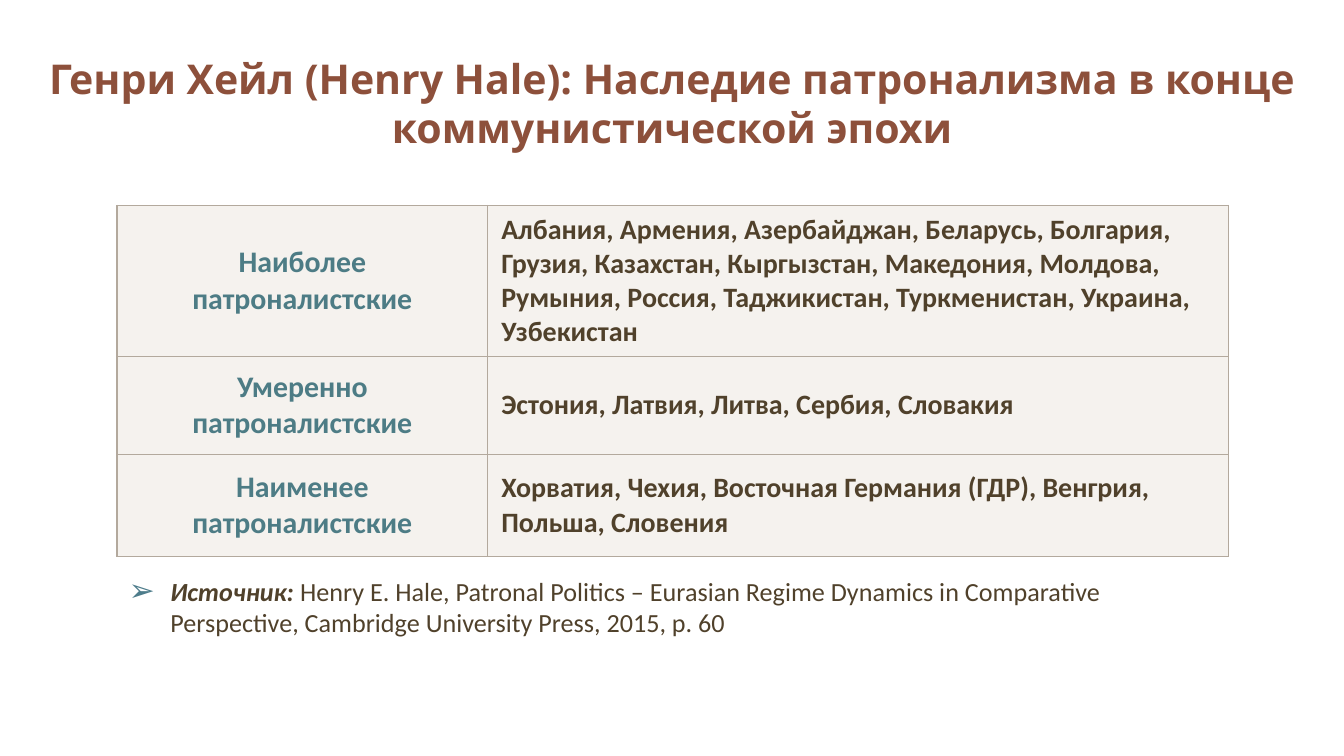
"""Build a slide with a table of post-communist countries by degree of patronalism."""
from lxml.etree import SubElement
from pptx import Presentation
from pptx.dml.color import RGBColor
from pptx.enum.text import MSO_ANCHOR as ANCHOR, MSO_AUTO_SIZE as AUTO, PP_ALIGN as ALIGN
from pptx.oxml import parse_xml
from pptx.oxml.ns import nsdecls, qn
from pptx.util import Inches, Pt

COLORS = {"title": "8D503B", "label": "4D7C85", "text": "50412B",
          "bullet": "4D7C8B", "border": "B3A99D", "cell": "EFEAE4"}
FORMATS = {
    "title": {"name": "Open Sans", "size": Pt(22), "bold": True},
    "label": {"name": "Calibri", "size": Pt(16), "bold": True},
    "countries": {"name": "Calibri", "size": Pt(15), "bold": True},
    "source": {"name": "Calibri", "size": Pt(14), "bold": True, "italic": True},
    "reference": {"name": "Calibri", "size": Pt(14), "bold": False, "italic": False},
}
ROWS = [
    ("Наиболее патроналистские", 1.08,
     "Албания, Армения, Азербайджан, Беларусь, Болгария, Грузия, Казахстан, Кыргызстан, "
     "Македония, Молдова, Румыния, Россия, Таджикистан, Туркменистан, Украина, Узбекистан"),
    ("Умеренно патроналистские", 0.73, "Эстония, Латвия, Литва, Сербия, Словакия"),
    ("Наименее патроналистские", 0.76,
     "Хорватия, Чехия, Восточная Германия (ГДР), Венгрия, Польша, Словения"),
]
COL_WIDTHS = [2.76, 5.51]


def add_run(p, text, style, color):
    r = p.add_run()
    r.text = text
    for key, value in FORMATS[style].items():
        setattr(r.font, key, value)
    r.font.color.rgb = RGBColor.from_string(COLORS[color])


def style_cell(cell, row, col):
    cell.vertical_anchor = ANCHOR.MIDDLE
    cell.fill.solid()
    cell.fill.fore_color.rgb = RGBColor.from_string(COLORS["cell"])
    tcPr = cell._tc.get_or_add_tcPr()
    SubElement(tcPr.find(".//" + qn("a:srgbClr")), qn("a:alpha"), val="60000")
    outer = {"L": col == 0, "R": col == len(COL_WIDTHS) - 1,
             "T": row == 0, "B": row == len(ROWS) - 1}
    for i, (side, is_outer) in enumerate(outer.items()):
        width = Pt(1 if is_outer else 0.5)
        tcPr.insert(i, parse_xml(
            f'<a:ln{side} {nsdecls("a")} w="{width}"><a:solidFill>'
            f'<a:srgbClr val="{COLORS["border"]}"/></a:solidFill></a:ln{side}>'))


prs = Presentation()
prs.slide_width, prs.slide_height = Inches(10), Inches(10 * 9 / 16)
s = prs.slides.add_slide(prs.slide_layouts[5])

title = s.shapes.title
title.left, title.top = Inches(0.12), Inches(0)
title.width, title.height = Inches(9.76), Inches(1.53)
tf = title.text_frame
tf.word_wrap = True
tf.auto_size = AUTO.NONE
tf.vertical_anchor = ANCHOR.MIDDLE
p = tf.paragraphs[0]
p.alignment = ALIGN.CENTER
add_run(p, "Генри Хейл (Henry Hale): Наследие патронализма в конце коммунистической эпохи",
        "title", "title")

table = s.shapes.add_table(len(ROWS), len(COL_WIDTHS), Inches(0.87), Inches(1.53),
                           Inches(8.26), Inches(2.59)).table
table.first_row = table.horz_banding = False
for column, width in zip(table.columns, COL_WIDTHS):
    column.width = Inches(width)
for row, (label, height, countries) in enumerate(ROWS):
    table.rows[row].height = Inches(height)
    for col in range(len(COL_WIDTHS)):
        style_cell(table.cell(row, col), row, col)
    p = table.cell(row, 0).text_frame.paragraphs[0]
    p.alignment = ALIGN.CENTER
    add_run(p, label, "label", "label")
    add_run(table.cell(row, 1).text_frame.paragraphs[0], countries, "countries", "text")

source = s.shapes.add_textbox(Inches(0.86), Inches(4.23), Inches(8.26), Inches(0.57))
tf = source.text_frame
tf.word_wrap = True
tf.auto_size = AUTO.SHAPE_TO_FIT_TEXT
p = tf.paragraphs[0]
pPr = p._p.get_or_add_pPr()
pPr.set("marL", str(Inches(0.31)))
pPr.set("indent", str(Inches(-0.31)))
SubElement(SubElement(pPr, qn("a:buClr")), qn("a:srgbClr"), val=COLORS["bullet"])
SubElement(pPr, qn("a:buSzPct"), val="120000")
SubElement(pPr, qn("a:buFont"), typeface="Calibri")
SubElement(pPr, qn("a:buChar"), char="➢")
add_run(p, "Источник: ", "source", "text")
add_run(p, "Henry E. Hale, Patronal Politics – Eurasian Regime Dynamics in Comparative "
        "Perspective, Cambridge University Press, 2015, p. 60", "reference", "text")

prs.save("out.pptx")
